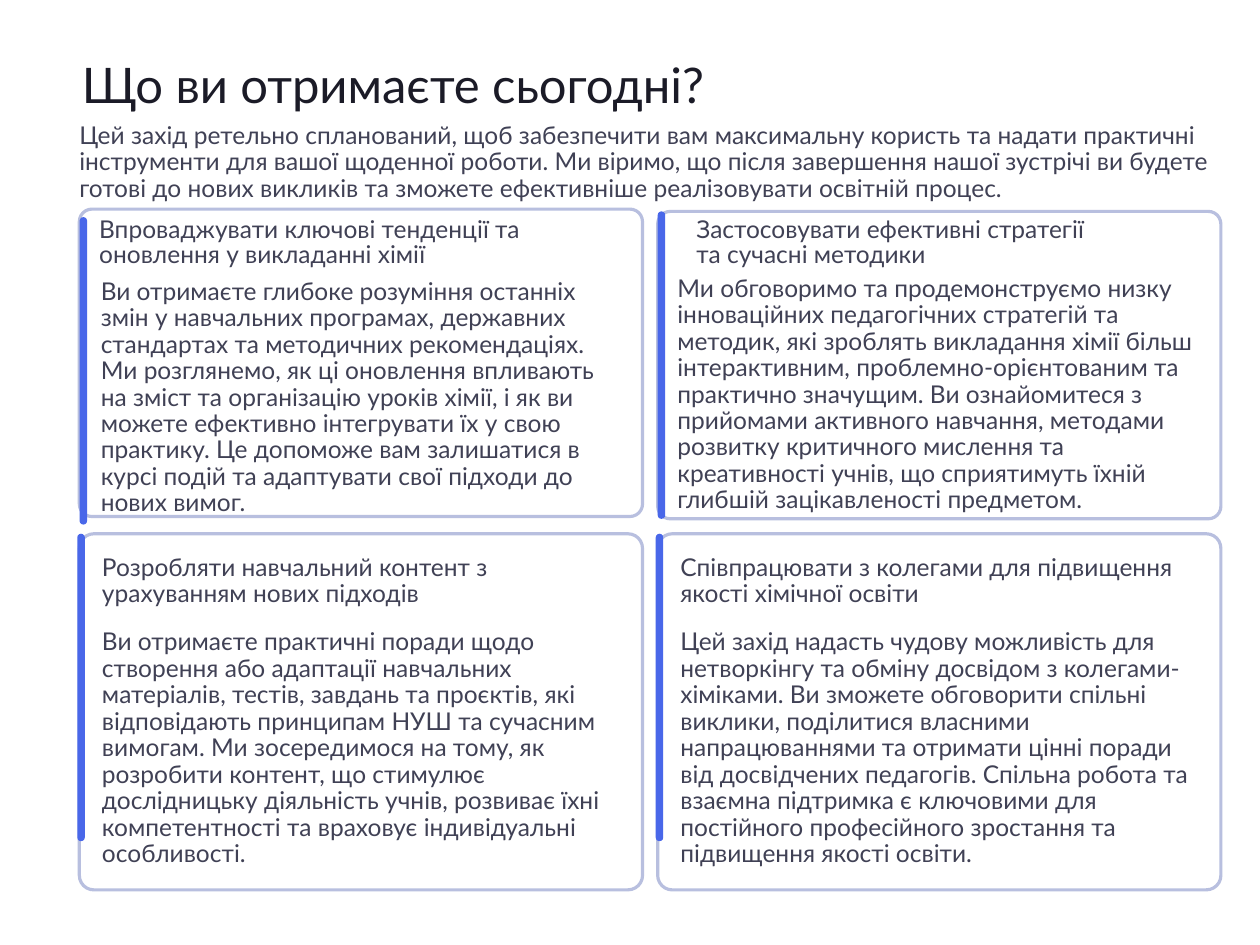
"""Build a slide with a title, an introduction and four benefit cards."""
from pptx import Presentation
from pptx.dml.color import RGBColor
from pptx.enum.shapes import MSO_SHAPE as Shape
from pptx.enum.text import MSO_ANCHOR as Anchor, MSO_AUTO_SIZE as AutoSize, PP_ALIGN as Align
from pptx.util import Pt

COLORS = {"title": "1B1B27", "text": "404155", "border": "B8BFDF", "accent": "4967E9"}


def write_text(box, text, size=14, color="text", leading=15.1, wrap=True):
    frame = box.text_frame
    frame.margin_left = frame.margin_top = frame.margin_right = frame.margin_bottom = 0
    frame.auto_size = AutoSize.NONE
    frame.word_wrap = wrap
    frame.vertical_anchor = Anchor.TOP
    for index, line in enumerate(text.split("\n")):
        para = frame.add_paragraph() if index else frame.paragraphs[0]
        para.alignment = Align.LEFT
        para.line_spacing = Pt(leading)
        para.space_before = Pt(0)
        span = para.add_run()
        span.text = line
        span.font.name = "Lato"
        span.font.size = Pt(size)
        span.font.color.rgb = RGBColor.from_string(COLORS[color])


def add_rounded(page, left, top, width, height, corner, fill=None, line=None):
    shape = page.shapes.add_shape(Shape.ROUNDED_RECTANGLE, Pt(left), Pt(top), Pt(width), Pt(height))
    shape.shadow.inherit = False
    shape.adjustments[0] = corner
    if fill:
        shape.fill.solid()
        shape.fill.fore_color.rgb = RGBColor.from_string(COLORS[fill])
    else:
        shape.fill.background()
    if line:
        shape.line.color.rgb = RGBColor.from_string(COLORS[line])
        shape.line.width = Pt(1.8)
    else:
        shape.line.fill.background()


deck = Presentation()
deck.slide_width, deck.slide_height = Pt(720), Pt(540)
page = deck.slides.add_slide(deck.slide_layouts[5])

title = page.shapes.title
title.left, title.top, title.width, title.height = Pt(46.8), Pt(35.28), Pt(380), Pt(35.28)
write_text(title, "Що ви отримаєте сьогодні?", size=28, color="title", leading=29.4)

intro = page.shapes.add_textbox(Pt(45.36), Pt(70.3), Pt(652.32), Pt(46.8))
write_text(intro, "Цей захід ретельно спланований, щоб забезпечити вам максимальну користь та надати "
           "практичні інструменти для вашої щоденної роботи. Ми віримо, що після завершення нашої "
           "зустрічі ви будете готові до нових викликів та зможете ефективніше реалізовувати "
           "освітній процес.")

cards = [
    {"frame": (45.36, 119.5), "bar": (45.5, 124.1), "height": 175.68,
     "heading_at": (56.7, 124.1), "body_at": (57.6, 159.3), "body_height": 108,
     "heading": "Впроваджувати ключові тенденції та оновлення у викладанні хімії",
     "body": "Ви отримаєте глибоке розуміння останніх змін у навчальних програмах, державних "
             "стандартах та методичних рекомендаціях. Ми розглянемо, як ці оновлення впливають на "
             "зміст та організацію уроків хімії, і як ви можете ефективно інтегрувати їх у свою "
             "практику. Це допоможе вам залишатися в курсі подій та адаптувати свої підходи до "
             "нових вимог."},
    {"frame": (375.84, 120.8), "bar": (375.84, 120.8), "height": 175.68,
     "heading_at": (397.9, 124.1), "body_at": (387.1, 157.6), "body_height": 108,
     "heading": "Застосовувати ефективні стратегії\nта сучасні методики",
     "body": "Ми обговоримо та продемонструємо низку інноваційних педагогічних стратегій та методик, "
             "які зроблять викладання хімії більш інтерактивним, проблемно-орієнтованим та практично "
             "значущим. Ви ознайомитеся з прийомами активного навчання, методами розвитку критичного "
             "мислення та креативності учнів, що сприятимуть їхній глибшій зацікавленості предметом."},
    {"frame": (45.36, 305), "bar": (44.2, 305), "height": 203.5,
     "heading_at": (58.32, 317.5), "body_at": (58.32, 359.7), "body_height": 138.96,
     "heading": "Розробляти навчальний контент з урахуванням нових підходів",
     "body": "Ви отримаєте практичні поради щодо створення або адаптації навчальних матеріалів, "
             "тестів, завдань та проєктів, які відповідають принципам НУШ та сучасним вимогам. Ми "
             "зосередимося на тому, як розробити контент, що стимулює дослідницьку діяльність учнів, "
             "розвиває їхні компетентності та враховує індивідуальні особливості."},
    {"frame": (375.84, 305), "bar": (374.7, 305), "height": 203.5,
     "heading_at": (388.8, 317.5), "body_at": (388.8, 359.7), "body_height": 138.96,
     "heading": "Співпрацювати з колегами для підвищення якості хімічної освіти",
     "body": "Цей захід надасть чудову можливість для нетворкінгу та обміну досвідом з "
             "колегами-хіміками. Ви зможете обговорити спільні виклики, поділитися власними "
             "напрацюваннями та отримати цінні поради від досвідчених педагогів. Спільна робота та "
             "взаємна підтримка є ключовими для постійного професійного зростання та підвищення "
             "якості освіти."},
]

for card in cards:
    add_rounded(page, *card["frame"], 321.84, card["height"], 0.041, line="border")
    add_rounded(page, *card["bar"], 4.32, 175.68, 0.5, fill="accent")
    split = "\n" in card["heading"]
    left, top = card["heading_at"]
    heading = page.shapes.add_textbox(Pt(left), Pt(top), Pt(277.2 if split else 299.52), Pt(35.28))
    write_text(heading, card["heading"], leading=14.7, wrap=not split)
    left, top = card["body_at"]
    body = page.shapes.add_textbox(Pt(left), Pt(top), Pt(299.52), Pt(card["body_height"]))
    write_text(body, card["body"])

deck.save("out.pptx")
